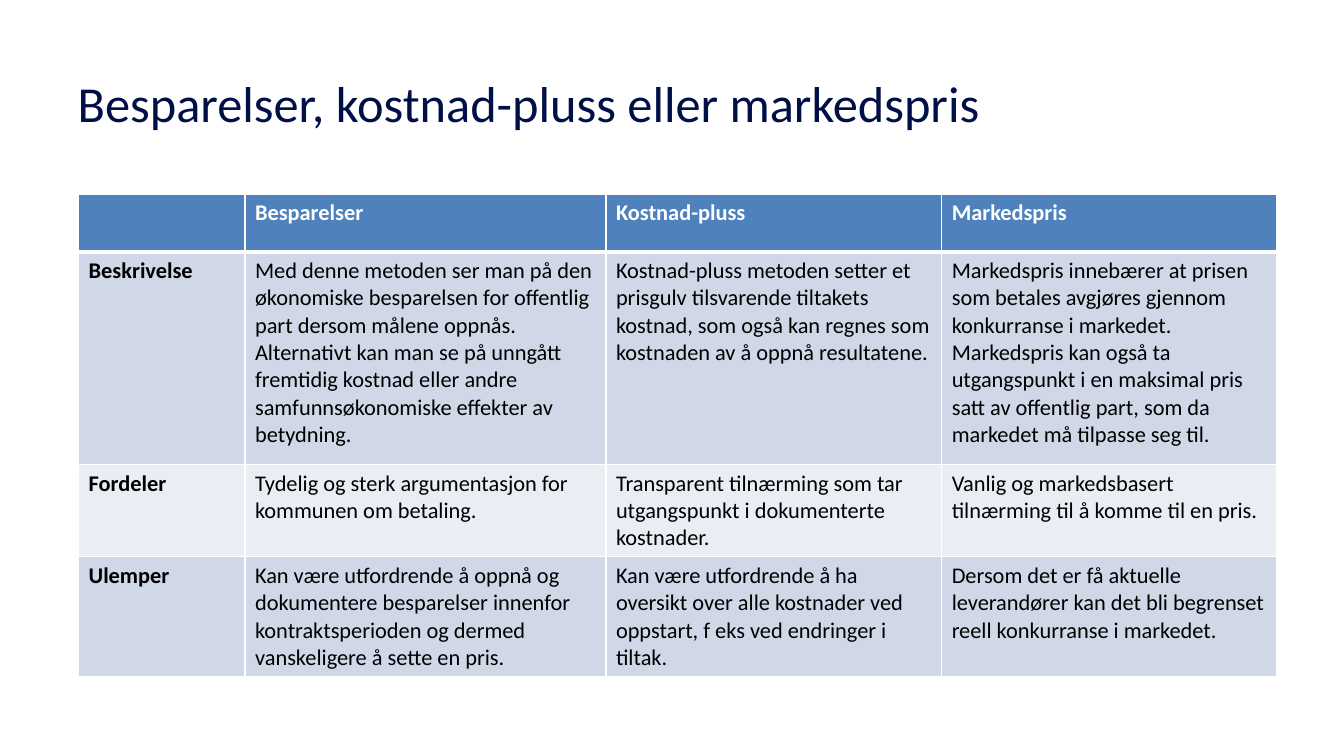
from dataclasses import dataclass

from lxml.etree import SubElement
from pptx import Presentation
from pptx.dml.color import RGBColor
from pptx.enum.text import MSO_ANCHOR, PP_ALIGN
from pptx.oxml.ns import qn
from pptx.table import _Cell
from pptx.text.text import TextFrame
from pptx.util import Inches, Pt

FONT = "Calibri"
NAVY, BLACK, WHITE = "001046", "000000", "FFFFFF"
HEADER_FILL, DARK_BAND, LIGHT_BAND = "4F81BD", "D0D8E8", "E9EDF4"
COLUMN_WIDTHS = (1.65, 3.58, 3.33, 3.32)


@dataclass(frozen=True)
class Row:
    height: float
    fill: str
    texts: tuple[str, str, str, str]


ROWS = (
    Row(0.57, HEADER_FILL, ("", "Besparelser", "Kostnad-pluss", "Markedspris")),
    Row(2.11, DARK_BAND, (
        "Beskrivelse",
        "Med denne metoden ser man på den økonomiske besparelsen for offentlig "
        "part dersom målene oppnås. Alternativt kan man se på unngått fremtidig "
        "kostnad eller andre samfunnsøkonomiske effekter av betydning. ",
        "Kostnad-pluss metoden setter et prisgulv tilsvarende tiltakets kostnad, "
        "som også kan regnes som kostnaden av å oppnå resultatene.",
        "Markedspris innebærer at prisen som betales avgjøres gjennom "
        "konkurranse i markedet. Markedspris kan også ta utgangspunkt i en "
        "maksimal pris satt av offentlig part, som da markedet må tilpasse seg til.",
    )),
    Row(0.39, LIGHT_BAND, (
        "Fordeler",
        "Tydelig og sterk argumentasjon for kommunen om betaling.",
        "Transparent tilnærming som tar utgangspunkt i dokumenterte kostnader.",
        "Vanlig og markedsbasert tilnærming til å komme til en pris.",
    )),
    Row(0.96, DARK_BAND, (
        "Ulemper",
        "Kan være utfordrende å oppnå og dokumentere besparelser innenfor "
        "kontraktsperioden og dermed vanskeligere å sette en pris.",
        "Kan være utfordrende å ha oversikt over alle kostnader ved oppstart, "
        "f eks ved endringer i tiltak.",
        "Dersom det er få aktuelle leverandører kan det bli begrenset reell "
        "konkurranse i markedet.",
    )),
)


def rgb(color: str) -> RGBColor:
    return RGBColor.from_string(color)


def write(tf: TextFrame, text: str, *, size: float, color: str, bold: bool = False) -> None:
    p = tf.paragraphs[0]
    p.alignment = PP_ALIGN.LEFT
    if not text:
        p.font.size = Pt(size)
        return
    r = p.add_run()
    r.text = text
    r.font.name = FONT
    r.font.size = Pt(size)
    r.font.bold = bold
    r.font.color.rgb = rgb(color)


def set_borders(cell: _Cell, *, top: float, bottom: float) -> None:
    """Draw white borders; the line elements must precede the cell fill."""
    tc_pr = cell._tc.get_or_add_tcPr()
    widths = {"a:lnL": 1, "a:lnR": 1, "a:lnT": top, "a:lnB": bottom}
    for index, (tag, width) in enumerate(widths.items()):
        ln = SubElement(tc_pr, qn(tag), w=str(Pt(width)))
        SubElement(SubElement(ln, qn("a:solidFill")), qn("a:srgbClr"), val=WHITE)
        tc_pr.insert(index, ln)


def main() -> None:
    prs = Presentation()
    prs.slide_width, prs.slide_height = Inches(13.33), Inches(7.5)
    s = prs.slides.add_slide(prs.slide_layouts[5])

    title = s.shapes.title
    title.left, title.top = Inches(0.67), Inches(0.4)
    title.width, title.height = Inches(12), Inches(1.24)
    title.text_frame.vertical_anchor = MSO_ANCHOR.MIDDLE
    write(title.text_frame, "Besparelser, kostnad-pluss eller markedspris",
          size=36, color=NAVY)

    table = s.shapes.add_table(
        len(ROWS), len(COLUMN_WIDTHS), Inches(0.78), Inches(1.93),
        Inches(sum(COLUMN_WIDTHS)), Inches(sum(row.height for row in ROWS))).table
    for column, width in zip(table.columns, COLUMN_WIDTHS):
        column.width = Inches(width)
    for i, row in enumerate(ROWS):
        table.rows[i].height = Inches(row.height)
        for j, text in enumerate(row.texts):
            cell = table.cell(i, j)
            cell.fill.solid()
            cell.fill.fore_color.rgb = rgb(row.fill)
            set_borders(cell, top=3 if i == 1 else 1, bottom=3 if i == 0 else 1)
            write(cell.text_frame, text, size=16, bold=i == 0 or j == 0,
                  color=WHITE if i == 0 else BLACK)

    prs.save("out.pptx")


if __name__ == "__main__":
    main()
